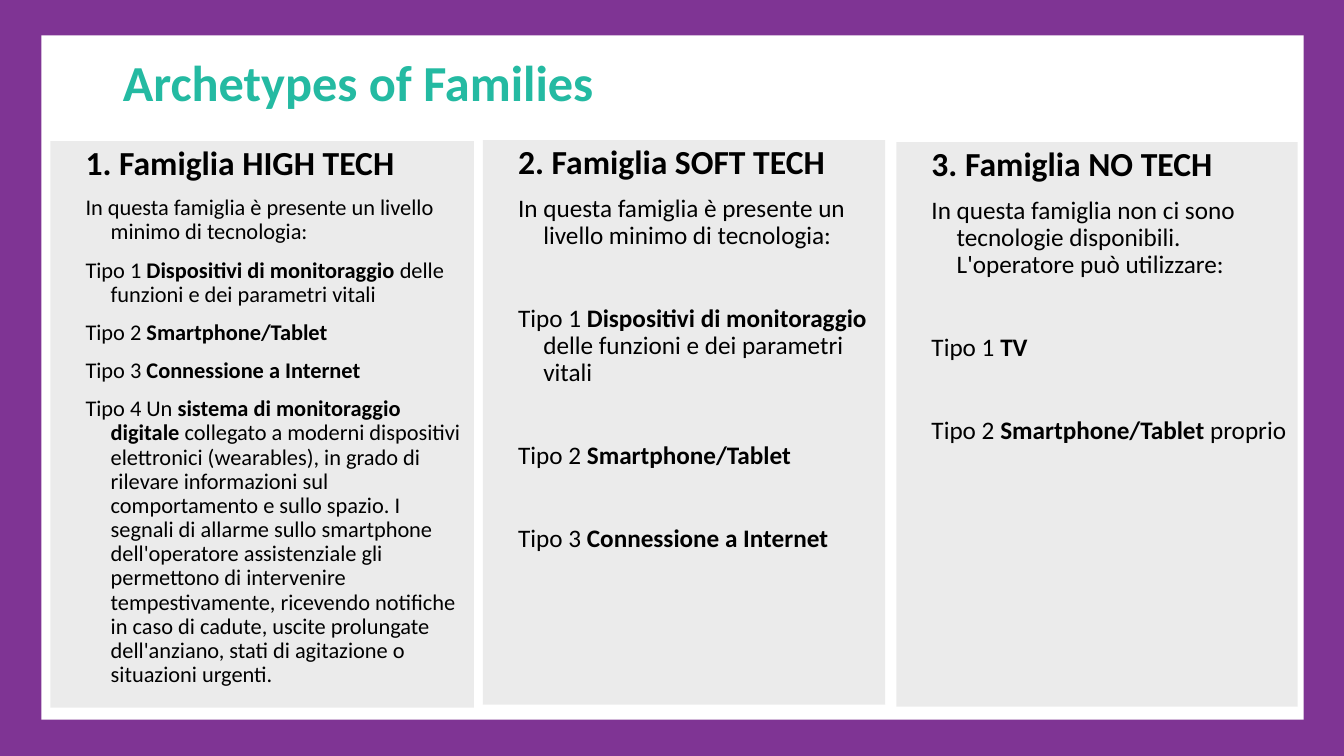
from lxml import etree
from pptx import Presentation
from pptx.dml.color import RGBColor
from pptx.enum.shapes import MSO_SHAPE
from pptx.enum.text import MSO_ANCHOR, PP_ALIGN
from pptx.oxml.ns import qn
from pptx.util import Inches, Pt

RECTANGLE = MSO_SHAPE.RECTANGLE
TOP = MSO_ANCHOR.TOP
LEFT = PP_ALIGN.LEFT
FONT = "Calibri"
COLORS = {
    "frame": "7F3494",
    "paper": "FFFFFF",
    "panel": "D8D8D8",
    "title": "24BAA2",
    "text": "000000",
}
BODY_GAP = 10
WIDE_GAP = 39.8  # one empty 18 pt line between entries

# Asterisks enclose the bold words.
FAMILIES = [
    {
        "box": (0.5, 1.4, 4.2, 5.62),
        "heading": "1. Famiglia HIGH TECH",
        "intro": "In questa famiglia è presente un livello minimo di tecnologia:",
        "types": [
            "Tipo 1 *Dispositivi di monitoraggio *delle funzioni e dei parametri vitali",
            "Tipo 2 *Smartphone/Tablet*",
            "Tipo 3 *Connessione a Internet*",
            "Tipo 4 Un *sistema di monitoraggio digitale *collegato a moderni "
            "dispositivi elettronici (wearables), in grado di rilevare informazioni "
            "sul comportamento e sullo spazio. I segnali di allarme sullo smartphone "
            "dell'operatore assistenziale gli permettono di intervenire "
            "tempestivamente, ricevendo notifiche in caso di cadute, uscite "
            "prolungate dell'anziano, stati di agitazione o situazioni urgenti.",
        ],
        "size": 16,
        "gap": BODY_GAP,
    },
    {
        "box": (4.79, 1.39, 3.99, 5.6),
        "heading": "2. Famiglia SOFT TECH",
        "intro": "In questa famiglia è presente un livello minimo di tecnologia:",
        "types": [
            "Tipo 1 *Dispositivi di monitoraggio *delle funzioni e dei parametri vitali",
            "Tipo 2 *Smartphone/Tablet*",
            "Tipo 3 *Connessione a Internet*",
        ],
        "size": 18,
        "gap": WIDE_GAP,
    },
    {
        "box": (8.89, 1.41, 3.98, 5.6),
        "heading": "3. Famiglia NO TECH",
        "intro": "In questa famiglia non ci sono tecnologie disponibili. "
                 "L'operatore può utilizzare:",
        "types": ["Tipo 1 *TV*", "Tipo 2 *Smartphone/Tablet* proprio"],
        "size": 18,
        "gap": WIDE_GAP,
    },
]


def add_rectangle(page, box, color, opacity=100):
    shape = page.shapes.add_shape(RECTANGLE, *map(Inches, box))
    shape.shadow.inherit = False
    shape.line.fill.background()
    shape.fill.solid()
    shape.fill.fore_color.rgb = RGBColor.from_string(COLORS[color])
    if opacity < 100:
        tint = shape.fill._xPr.find(qn("a:solidFill"))[0]
        etree.SubElement(tint, qn("a:alpha"), val=str(opacity * 1000))
    return shape


def prepare_frame(shape):
    frame = shape.text_frame
    frame.word_wrap = True
    frame.vertical_anchor = TOP
    return frame


def write(frame, text, size=18, color="text", bold=False, gap=BODY_GAP,
          margin=0.5, indent=-0.25):
    """Add a paragraph; words between asterisks switch weight."""
    para = frame.paragraphs[0]
    if para.runs:
        para = frame.add_paragraph()
    para.alignment = LEFT
    para.line_spacing = 0.9
    para.space_before = Pt(gap)
    properties = para._p.get_or_add_pPr()
    properties.set("marL", str(Inches(margin)))
    properties.set("indent", str(Inches(indent)))
    for index, words in enumerate(text.split("*")):
        if words:
            span = para.add_run()
            span.text = words
            span.font.name = FONT
            span.font.size = Pt(size)
            span.font.bold = bold != (index % 2 == 1)
            span.font.color.rgb = RGBColor.from_string(COLORS[color])


def add_title(page, text):
    box = page.shapes.add_textbox(*map(Inches, (0.87, 0.53, 11.59, 0.88)))
    write(prepare_frame(box), text, size=36, color="title", bold=True)


def add_family(page, family):
    frame = prepare_frame(add_rectangle(page, family["box"], "panel", opacity=50))
    write(frame, family["heading"], size=24, bold=True, margin=0.26, indent=-0.01)
    write(frame, family["intro"], size=family["size"])
    for entry in family["types"]:
        write(frame, entry, size=family["size"], gap=family["gap"])


def main():
    deck = Presentation()
    deck.slide_width, deck.slide_height = Inches(13.33), Inches(7.5)
    page = deck.slides.add_slide(deck.slide_layouts[6])
    add_rectangle(page, (0, 0, 13.33, 7.5), "frame")
    add_rectangle(page, (0.41, 0.35, 12.52, 6.79), "paper")
    add_title(page, "Archetypes of Families")
    for family in FAMILIES:
        add_family(page, family)
    deck.save("out.pptx")


if __name__ == "__main__":
    main()
